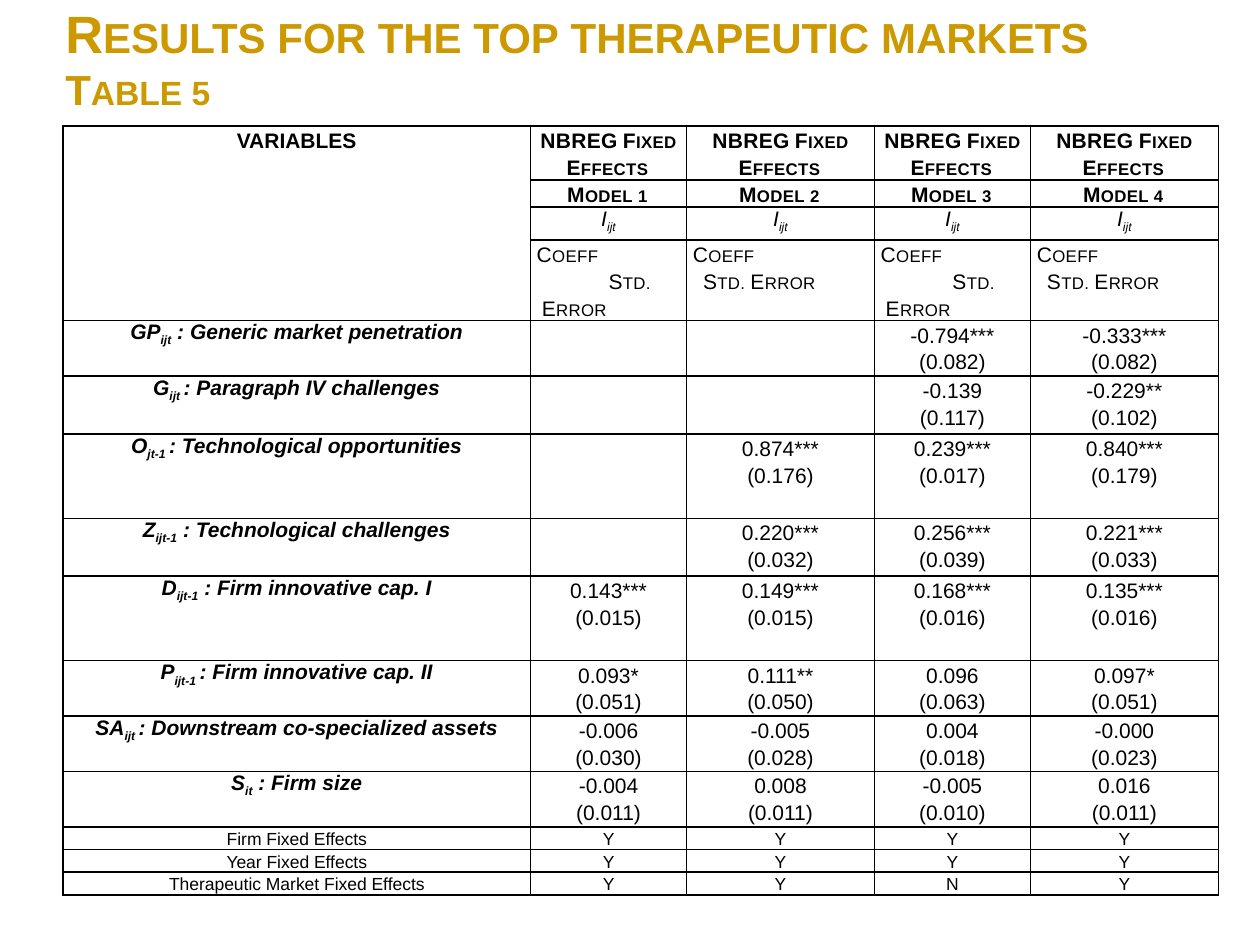
from lxml.etree import SubElement
from pptx import Presentation
from pptx.dml.color import RGBColor
from pptx.enum.text import MSO_ANCHOR, PP_ALIGN
from pptx.oxml.ns import qn
from pptx.util import Inches, Pt

GOLD = RGBColor(0xCC, 0x99, 0x00)
BLACK = RGBColor(0, 0, 0)
WHITE = RGBColor(0xFF, 0xFF, 0xFF)

TITLE = [("Results for the top therapeutic markets", 30), ("Table 5", 24)]
VARIABLES = [
    ("GP", "ijt", " : Generic market penetration",
     ["", "", "-0.794*** (0.082)", "-0.333*** (0.082)"]),
    ("G", "ijt ", ": Paragraph IV challenges",
     ["", "", "-0.139 (0.117)", "-0.229** (0.102)"]),
    ("O", "jt-1 ", ": Technological opportunities",
     ["", "0.874*** (0.176)", "0.239*** (0.017)", "0.840*** (0.179)"]),
    ("Z", "ijt-1", " : Technological challenges",
     ["", "0.220*** (0.032)", "0.256*** (0.039)", "0.221*** (0.033)"]),
    ("D", "ijt-1", " : Firm innovative cap. I",
     ["0.143*** (0.015)", "0.149*** (0.015)", "0.168*** (0.016)", "0.135*** (0.016)"]),
    ("P", "ijt-1 ", ": Firm innovative cap. II",
     ["0.093* (0.051)", "0.111** (0.050)", "0.096 (0.063)", "0.097* (0.051)"]),
    ("SA", "ijt ", ": Downstream co-specialized assets",
     ["-0.006 (0.030)", "-0.005 (0.028)", "0.004 (0.018)", "-0.000 (0.023)"]),
    ("S", "it", " : Firm size",
     ["-0.004 (0.011)", "0.008 (0.011)", "-0.005 (0.010)", "0.016 (0.011)"]),
]
CONTROLS = [
    ("Firm Fixed Effects", "YYYY"),
    ("Year Fixed Effects", "YYYY"),
    ("Therapeutic Market Fixed Effects", "YYNY"),
]
COLUMNS = [3.71, 1.24, 1.49, 1.24, 1.49]
ROWS = [0.43, 0.21, 0.26, 0.64, 0.44, 0.46, 0.67, 0.46, 0.67,
        0.44, 0.44, 0.44, 0.18, 0.18, 0.18]
HEADER_ROWS = 4
STD_ERROR_INDENTS = [(0.04, 0.53), (0.08, 0)]
LEADING = 1.28

BODY = {"size": Pt(12), "name": "Arial", "bold": False, "italic": False}
BOLD = {**BODY, "bold": True}
ITALIC = {**BODY, "italic": True}
LABEL = {**BOLD, "italic": True}
SMALL = {**BODY, "size": Pt(10)}
CAPS = {"cap": "small", "spc": "20"}
SUBSCRIPT = {"baseline": "-25000"}


def add_run(p, text, font, color=BLACK, extra=None):
    r = p.add_run()
    r.text = text
    for name, value in font.items():
        setattr(r.font, name, value)
    r.font.color.rgb = color
    for name, value in (extra or {}).items():
        r._r.get_or_add_rPr().set(name, value)


def add_lines(cell, lines, align=PP_ALIGN.CENTER):
    tf = cell.text_frame
    for i, runs in enumerate(lines):
        p = tf.add_paragraph() if i else tf.paragraphs[0]
        p.alignment = align
        p.line_spacing = Pt(runs[0][1]["size"].pt * LEADING)
        for text, font, extra in runs:
            add_run(p, text, font, extra=extra)


def format_cell(cell):
    for side, inset in (("left", 0.05), ("right", 0.05), ("top", 0), ("bottom", 0)):
        setattr(cell, f"margin_{side}", Inches(inset))
    tcPr = cell._tc.get_or_add_tcPr()
    for edge in ("a:lnL", "a:lnR", "a:lnT", "a:lnB"):
        ln = SubElement(tcPr, qn(edge), w=str(Pt(1)))
        fill = SubElement(ln, qn("a:solidFill"))
        SubElement(fill, qn("a:srgbClr"), val=str(BLACK))
    cell.fill.solid()
    cell.fill.fore_color.rgb = WHITE


def add_title(s):
    sp = s.shapes.add_textbox(Inches(0.42), Inches(-0.17), Inches(9.83), Inches(1.25))
    tf = sp.text_frame
    tf.word_wrap = True
    tf.vertical_anchor = MSO_ANCHOR.MIDDLE
    p = tf.paragraphs[0]
    for i, (text, size) in enumerate(TITLE):
        if i:
            p.add_line_break()
        add_run(p, text, {**BOLD, "size": Pt(size)}, GOLD, {"cap": "small"})


def add_header(table):
    variables = table.cell(0, 0)
    variables.merge(table.cell(HEADER_ROWS - 1, 0))
    add_lines(variables, [[("VARIABLES", BOLD, None)]])
    for model in range(1, len(COLUMNS)):
        add_lines(table.cell(0, model), [[("NBREG Fixed Effects", BOLD, CAPS)]])
        add_lines(table.cell(1, model), [[(f"Model {model}", BOLD, CAPS)]])
        add_lines(table.cell(2, model), [[("I", ITALIC, None), ("ijt", ITALIC, SUBSCRIPT)]])
        units = table.cell(3, model)
        add_lines(units, [[("Coeff", BODY, CAPS)], [("Std. Error", BODY, CAPS)]],
                  PP_ALIGN.LEFT)
        left, indent = STD_ERROR_INDENTS[(model - 1) % 2]
        pPr = units.text_frame.paragraphs[1]._p.get_or_add_pPr()
        pPr.set("marL", str(Inches(left)))
        pPr.set("indent", str(Inches(indent)))


def add_body(table):
    for row, (symbol, index, meaning, results) in enumerate(VARIABLES, HEADER_ROWS):
        add_lines(table.cell(row, 0), [[(symbol, LABEL, None), (index, LABEL, SUBSCRIPT),
                                        (meaning, LABEL, None)]])
        for col, result in enumerate(results, 1):
            add_lines(table.cell(row, col), [[(t, BODY, None)] for t in result.split()])
    for row, (label, flags) in enumerate(CONTROLS, HEADER_ROWS + len(VARIABLES)):
        for col, text in enumerate([label, *flags]):
            add_lines(table.cell(row, col), [[(text, SMALL, None)]])


def main():
    prs = Presentation()
    prs.slide_width, prs.slide_height = Inches(10), Inches(7.5)
    s = prs.slides.add_slide(prs.slide_layouts[6])
    add_title(s)
    table = s.shapes.add_table(len(ROWS), len(COLUMNS), Inches(0.5), Inches(1),
                               Inches(sum(COLUMNS)), Inches(sum(ROWS))).table
    table.first_row = table.horz_banding = False
    for column, width in zip(table.columns, COLUMNS):
        column.width = Inches(width)
    for row, height in zip(table.rows, ROWS):
        row.height = Inches(height)
    for cell in table.iter_cells():
        format_cell(cell)
    add_header(table)
    add_body(table)
    prs.save("out.pptx")


if __name__ == "__main__":
    main()
